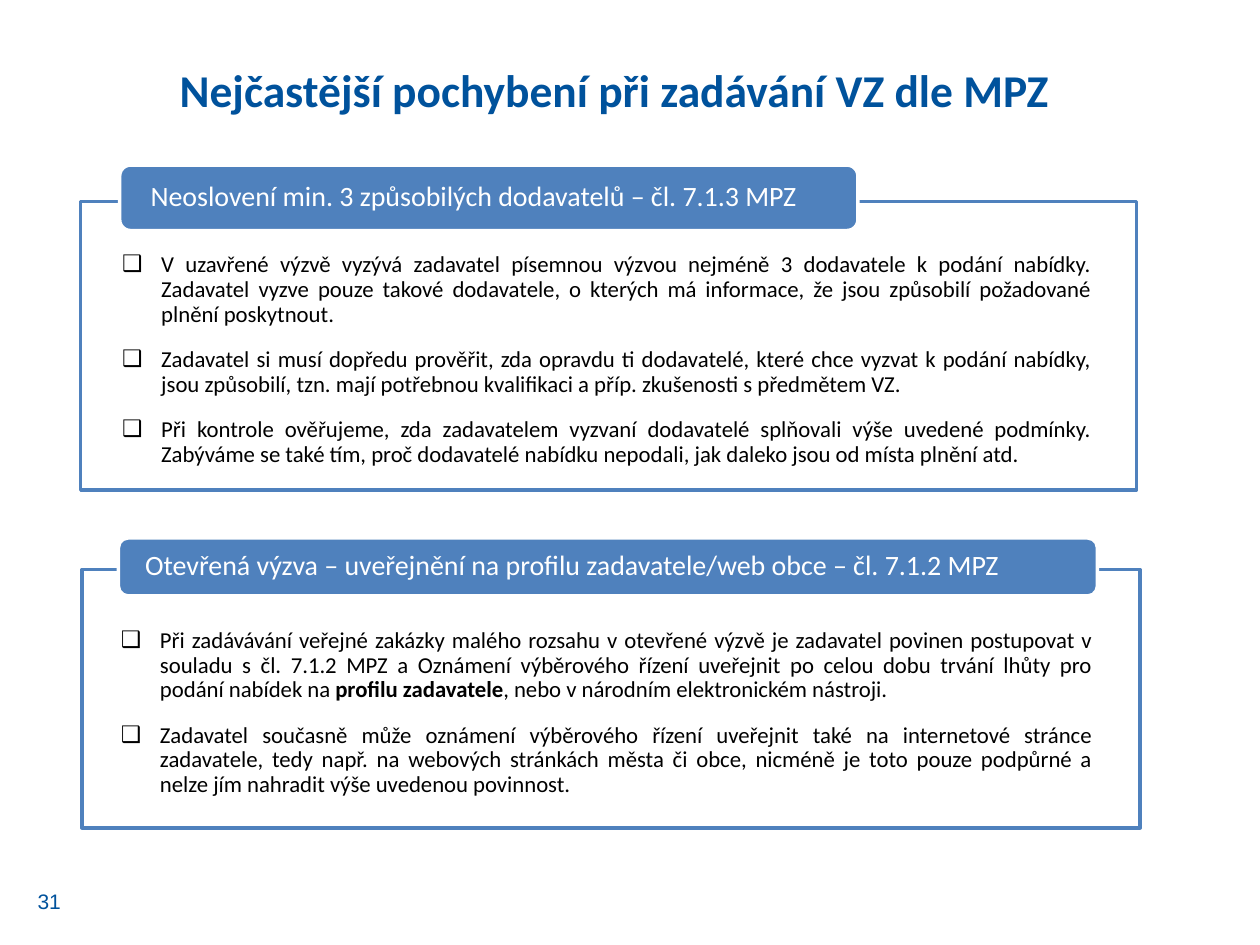
from lxml import etree
from pptx import Presentation
from pptx.dml.color import RGBColor
from pptx.enum.shapes import MSO_SHAPE
from pptx.enum.text import MSO_ANCHOR, MSO_AUTO_SIZE, PP_ALIGN
from pptx.oxml.ns import qn
from pptx.util import Inches, Pt

RECTANGLE, ROUNDED = MSO_SHAPE.RECTANGLE, MSO_SHAPE.ROUNDED_RECTANGLE
TOP, MIDDLE = MSO_ANCHOR.TOP, MSO_ANCHOR.MIDDLE
NO_AUTOFIT = MSO_AUTO_SIZE.NONE
LEFT, CENTER, JUSTIFY = PP_ALIGN.LEFT, PP_ALIGN.CENTER, PP_ALIGN.JUSTIFY

NAVY = RGBColor(0x00, 0x52, 0x9C)
BLUE = RGBColor(0x4F, 0x81, 0xBD)
WHITE = RGBColor(0xFF, 0xFF, 0xFF)
BLACK = RGBColor(0x00, 0x00, 0x00)

INVITED_SUPPLIERS = [
    "V uzavřené výzvě vyzývá zadavatel písemnou výzvou nejméně 3 dodavatele k podání nabídky. "
    "Zadavatel vyzve pouze takové dodavatele, o kterých má informace, že jsou způsobilí "
    "požadované plnění poskytnout.",
    "Zadavatel si musí dopředu prověřit, zda opravdu ti dodavatelé, které chce vyzvat k podání "
    "nabídky, jsou způsobilí, tzn. mají potřebnou kvalifikaci a příp. zkušenosti s předmětem VZ.",
    "Při kontrole ověřujeme, zda zadavatelem vyzvaní dodavatelé splňovali výše uvedené podmínky. "
    "Zabýváme se také tím, proč dodavatelé nabídku nepodali, jak daleko jsou od místa plnění atd.",
]
OPEN_CALL = [
    "Při zadávávání veřejné zakázky malého rozsahu v otevřené výzvě je zadavatel povinen "
    "postupovat v souladu s čl. 7.1.2 MPZ a Oznámení výběrového řízení uveřejnit po celou dobu "
    "trvání lhůty pro podání nabídek na **profilu zadavatele**, nebo v národním elektronickém "
    "nástroji.",
    "Zadavatel současně může oznámení výběrového řízení uveřejnit také na internetové stránce "
    "zadavatele, tedy např. na webových stránkách města či obce, nicméně je toto pouze podpůrné "
    "a nelze jím nahradit výše uvedenou povinnost.",
]


def place(shape, box):
    """Move and size a shape to left, top, width, height in inches."""
    shape.left, shape.top, shape.width, shape.height = map(Inches, box)


def style(font, name, size, color, bold=False):
    """Set the face, size, colour and weight of a font."""
    font.name, font.size, font.bold = name, Pt(size), bold
    font.color.rgb = color


def add_panel(slide, preset, box, fill, line):
    """Add a filled and outlined shape without a shadow."""
    panel = slide.shapes.add_shape(preset, *map(Inches, box))
    panel.shadow.inherit = False
    panel.fill.solid()
    panel.fill.fore_color.rgb = fill
    panel.line.color.rgb = line
    panel.line.width = Pt(2)
    return panel


def add_frame(slide, box):
    """Add a slightly transparent white frame with a blue outline."""
    frame = add_panel(slide, RECTANGLE, box, WHITE, BLUE)
    color = frame._element.spPr.find(qn("a:solidFill"))[0]
    etree.SubElement(color, qn("a:alpha"), val="90000")


def add_heading(slide, text, box, inset):
    """Add a rounded blue heading bar."""
    heading = add_panel(slide, ROUNDED, box, BLUE, WHITE)
    frame = heading.text_frame
    frame.text = text
    frame.vertical_anchor = MIDDLE
    frame.margin_left, frame.margin_right = Inches(inset), Inches(0.19)
    frame.margin_top = frame.margin_bottom = 0
    paragraph = frame.paragraphs[0]
    paragraph.alignment = LEFT
    paragraph.line_spacing = 0.9
    style(paragraph.runs[0].font, "Calibri", 16, WHITE)


def add_bullet(paragraph):
    """Give a paragraph a hanging checkbox bullet."""
    properties = paragraph._p.get_or_add_pPr()
    properties.set("marL", str(Inches(0.31)))
    properties.set("indent", str(-Inches(0.31)))
    etree.SubElement(properties, qn("a:buChar"), char="❑")


def fill_list(slide, placeholder, items, box, margins):
    """Fill a body placeholder with justified items and bring it to the front."""
    slide.shapes._spTree.append(placeholder._element)
    place(placeholder, box)
    frame = placeholder.text_frame
    frame.auto_size, frame.vertical_anchor = NO_AUTOFIT, TOP
    (frame.margin_left, frame.margin_top,
     frame.margin_right, frame.margin_bottom) = map(Inches, margins)
    for index, item in enumerate(items):
        paragraph = frame.add_paragraph() if index else frame.paragraphs[0]
        add_bullet(paragraph)
        paragraph.level = 1
        paragraph.alignment = JUSTIFY
        paragraph.line_spacing = 0.9
        paragraph.space_before = Pt(12 if index else 0)
        paragraph.space_after = Pt(0)
        for position, part in enumerate(item.split("**")):
            run = paragraph.add_run()
            run.text = part
            style(run.font, "Calibri", 13, BLACK, bold=position % 2 == 1)


def fill_title(title, text):
    """Fill and format the title placeholder."""
    place(title, (0.53, 0.44, 8.7, 0.57))
    frame = title.text_frame
    frame.text = text
    frame.auto_size, frame.vertical_anchor = NO_AUTOFIT, TOP
    frame.paragraphs[0].alignment = CENTER
    style(frame.paragraphs[0].runs[0].font, "Calibri", 26, NAVY, bold=True)


def add_page_number(slide, number):
    """Add the page number at the bottom left."""
    box = slide.shapes.add_textbox(*map(Inches, (0.2, 6.95, 0.55, 0.4)))
    frame = box.text_frame
    frame.word_wrap = True
    frame.text = number
    frame.vertical_anchor = MIDDLE
    style(frame.paragraphs[0].runs[0].font, "Arial", 12, NAVY)


def main():
    """Build the slide and save it."""
    presentation = Presentation()
    presentation.slide_width, presentation.slide_height = Inches(10), Inches(7.5)
    slide = presentation.slides.add_slide(presentation.slide_layouts[3])
    title, suppliers, call = slide.placeholders

    add_page_number(slide, "31")
    fill_title(title, "Nejčastější pochybení při zadávání VZ dle MPZ")

    add_frame(slide, (0.64, 1.6, 8.38, 2.29))
    fill_list(slide, suppliers, INVITED_SUPPLIERS, (0.41, 1.6, 8.8, 2.29),
              (0.56, 0.41, 0.56, 0.09))
    add_heading(slide, "Neoslovení min. 3 způsobilých dodavatelů – čl. 7.1.3 MPZ",
                (0.95, 1.31, 5.86, 0.52), 0.22)

    add_frame(slide, (0.65, 4.52, 8.4, 2.05))
    add_heading(slide, "Otevřená výzva – uveřejnění na profilu zadavatele/web obce – čl. 7.1.2 MPZ",
                (0.94, 4.27, 7.77, 0.46), 0.19)
    fill_list(slide, call, OPEN_CALL, (0.86, 4.94, 7.9, 1.93), (0.1, 0.05, 0.1, 0.05))

    presentation.save("out.pptx")


if __name__ == "__main__":
    main()
